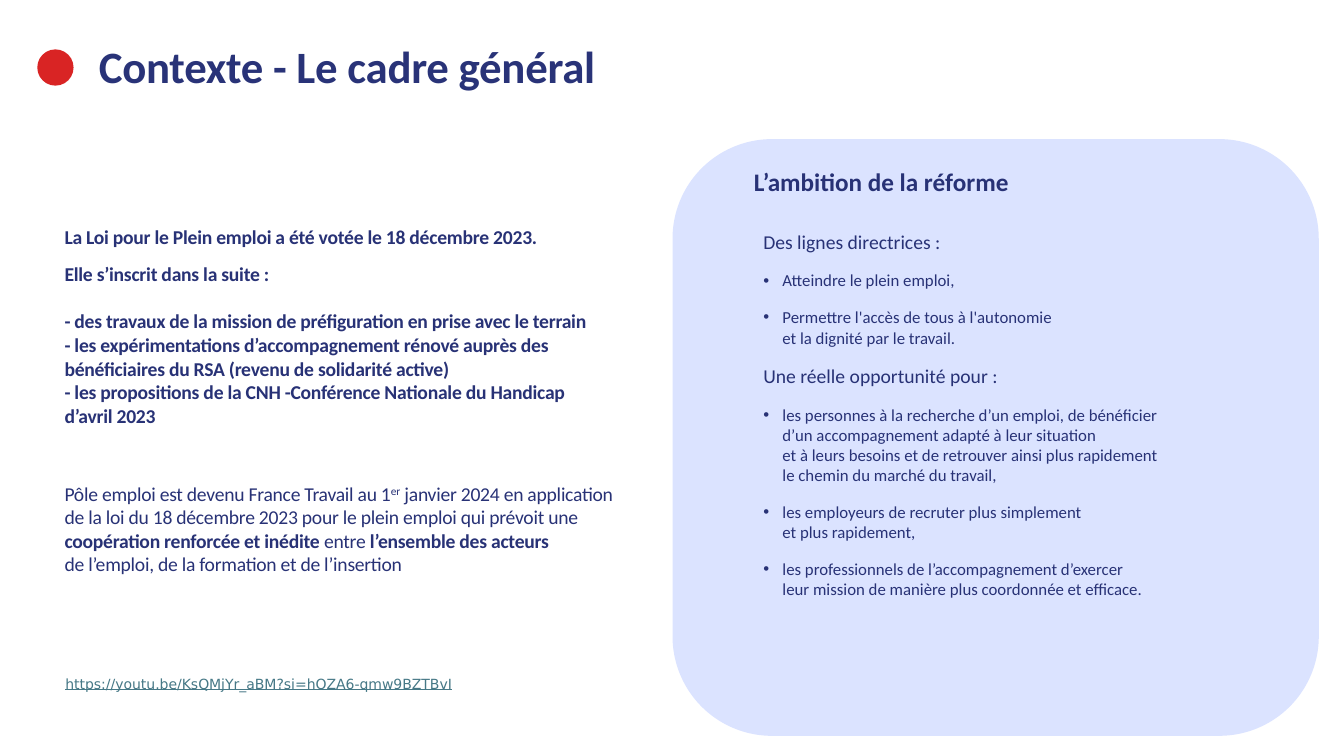
from copy import deepcopy

from pptx import Presentation
from pptx.dml.color import RGBColor
from pptx.enum import shapes, text
from pptx.oxml import ns
from pptx.util import Inches, Pt
from lxml import etree

NAVY = RGBColor(0x28, 0x32, 0x76)
TITLE_NAVY = RGBColor(0x29, 0x33, 0x78)
RED = RGBColor(0xD9, 0x24, 0x24)
PALE_BLUE = RGBColor(0xDB, 0xE3, 0xFF)
LINK_TEAL = RGBColor(0x46, 0x78, 0x86)

TITLE = "Contexte - Le cadre général"
LAW = [
    (0, "La Loi pour le Plein emploi a été votée le 18 décembre 2023."),
    (9.8, "Elle s’inscrit dans la suite :"),
    (17, "- des travaux de la mission de préfiguration en prise avec le terrain"),
    (0, "- les expérimentations d’accompagnement rénové auprès des bénéficiaires "
        "du RSA (revenu de solidarité active)"),
    (0, "- les propositions de la CNH -Conférence Nationale du Handicap\vd’avril 2023"),
]
AGENCY_GAP = 39
AGENCY = [
    ("Pôle emploi est devenu France Travail au 1", "plain"),
    ("er", "superscript"),
    (" janvier 2024 en application de la loi du 18 décembre 2023 "
     "pour le plein emploi qui prévoit une ", "plain"),
    ("coopération renforcée et inédite", "bold"),
    (" entre ", "plain"),
    ("l’ensemble des acteurs", "bold"),
    ("\v", "break"),
    ("de l’emploi, de la formation et de l’insertion", "plain"),
]
AMBITION = "L’ambition de la réforme"
GOALS = [
    ("Des lignes directrices :", [
        "Atteindre le plein emploi,",
        "Permettre l'accès de tous à l'autonomie\vet la dignité par le travail.",
    ]),
    ("Une réelle opportunité pour :", [
        "les personnes à la recherche d’un emploi, de bénéficier\v"
        "d’un accompagnement adapté à leur situation\v"
        "et à leurs besoins et de retrouver ainsi plus rapidement\v"
        "le chemin du marché du travail,",
        "les employeurs de recruter plus simplement\vet plus rapidement,",
        "les professionnels de l’accompagnement d’exercer\v"
        "leur mission de manière plus coordonnée et efficace.",
    ]),
]
VIDEO = "https://youtu.be/KsQMjYr_aBM?si=hOZA6-qmw9BZTBvI"


def place(shape, left, top, width, height, inset=True):
    shape.left, shape.top = Inches(left), Inches(top)
    shape.width, shape.height = Inches(width), Inches(height)
    frame = shape.text_frame
    frame.word_wrap = True
    frame.auto_size = text.MSO_AUTO_SIZE.NONE
    frame.vertical_anchor = text.MSO_ANCHOR.TOP
    if not inset:
        frame.margin_left = frame.margin_right = 0
        frame.margin_top = frame.margin_bottom = 0
    return frame


def next_paragraph(frame):
    first = frame.paragraphs[0]
    return first if not first.runs else frame.add_paragraph()


def lay_out(paragraph, before=0, after=0, spacing=1.0, bullet=None):
    indent = Inches(0.19) if bullet else 0
    properties = paragraph._p.get_or_add_pPr()
    properties.set("marL", str(indent))
    properties.set("indent", str(-indent))
    mark = etree.SubElement(properties, ns.qn("a:buChar" if bullet else "a:buNone"))
    if bullet:
        mark.set("char", bullet)
    paragraph.alignment = text.PP_ALIGN.LEFT
    paragraph.space_before = Pt(before)
    paragraph.space_after = Pt(after)
    paragraph.line_spacing = spacing


def style(paragraph, size, color=NAVY, bold=False, face="Calibri", tracking=0):
    for run in paragraph.runs:
        run.font.size = Pt(size)
        run.font.name = face
        run.font.bold = bold
        run.font.color.rgb = color
        if tracking:
            run._r.get_or_add_rPr().set("spc", str(tracking))
    for line_break in paragraph._p.findall(ns.qn("a:br")):
        line_break.insert(0, deepcopy(line_break.getprevious().rPr))


def fill(shape, color):
    shape.fill.solid()
    shape.fill.fore_color.rgb = color
    shape.line.fill.background()
    shape.shadow.inherit = False


def add_title(slide):
    frame = place(slide.shapes.title, 0.98, 0.44, 11.98, 0.41, inset=False)
    frame.text = TITLE
    lay_out(frame.paragraphs[0], spacing=0.9)
    style(frame.paragraphs[0], 32, TITLE_NAVY, bold=True, tracking=-20)
    dot = slide.shapes.add_shape(shapes.MSO_SHAPE.OVAL, Inches(0.37), Inches(0.49),
                                 Inches(0.36), Inches(0.36))
    fill(dot, RED)


def add_context(slide):
    frame = place(slide.placeholders[1], 0.64, 2.23, 5.51, 4.15, inset=False)
    for gap, wording in LAW:
        paragraph = next_paragraph(frame)
        paragraph.text = wording
        lay_out(paragraph, before=gap)
        style(paragraph, 14, bold=True, tracking=-20)

    agency = frame.add_paragraph()
    lay_out(agency, before=AGENCY_GAP)
    for wording, kind in AGENCY:
        if kind == "break":
            agency.add_line_break()
        else:
            agency.add_run().text = wording
    style(agency, 14, tracking=-20)
    kinds = [kind for _, kind in AGENCY if kind != "break"]
    for run, kind in zip(agency.runs, kinds):
        run.font.bold = kind == "bold"
        if kind == "superscript":
            run._r.get_or_add_rPr().set("baseline", "30000")


def add_ambition(slide):
    panel = slide.shapes.add_shape(shapes.MSO_SHAPE.ROUNDED_RECTANGLE, Inches(6.67),
                                   Inches(1.38), Inches(6.41), Inches(5.92))
    fill(panel, PALE_BLUE)
    slide.shapes._spTree.insert(2, panel._element)

    heading = place(slide.shapes.add_textbox(0, 0, 0, 0), 7.38, 1.45, 4.36, 0.5)
    heading.text = AMBITION
    lay_out(heading.paragraphs[0], spacing=1.5)
    style(heading.paragraphs[0], 18, bold=True)

    goals = place(slide.placeholders[2], 7.47, 2.23, 4.36, 4.61)
    for intro, points in GOALS:
        for wording, size, bullet in [(intro, 14, None)] + [(p, 12, "•") for p in points]:
            paragraph = next_paragraph(goals)
            paragraph.text = wording
            lay_out(paragraph, after=12, bullet=bullet)
            style(paragraph, size)


def add_video(slide):
    frame = place(slide.shapes.add_textbox(0, 0, 0, 0), 0.55, 6.65, 6.67, 0.27)
    frame.text = VIDEO
    style(frame.paragraphs[0], 10, LINK_TEAL, face="DejaVu Sans")
    frame.paragraphs[0].runs[0].font.underline = True


def main():
    deck = Presentation()
    deck.slide_width, deck.slide_height = Inches(13.33), Inches(7.5)
    slide = deck.slides.add_slide(deck.slide_layouts.get_by_name("Two Content"))
    add_title(slide)
    add_context(slide)
    add_ambition(slide)
    add_video(slide)
    deck.save("out.pptx")


if __name__ == "__main__":
    main()
